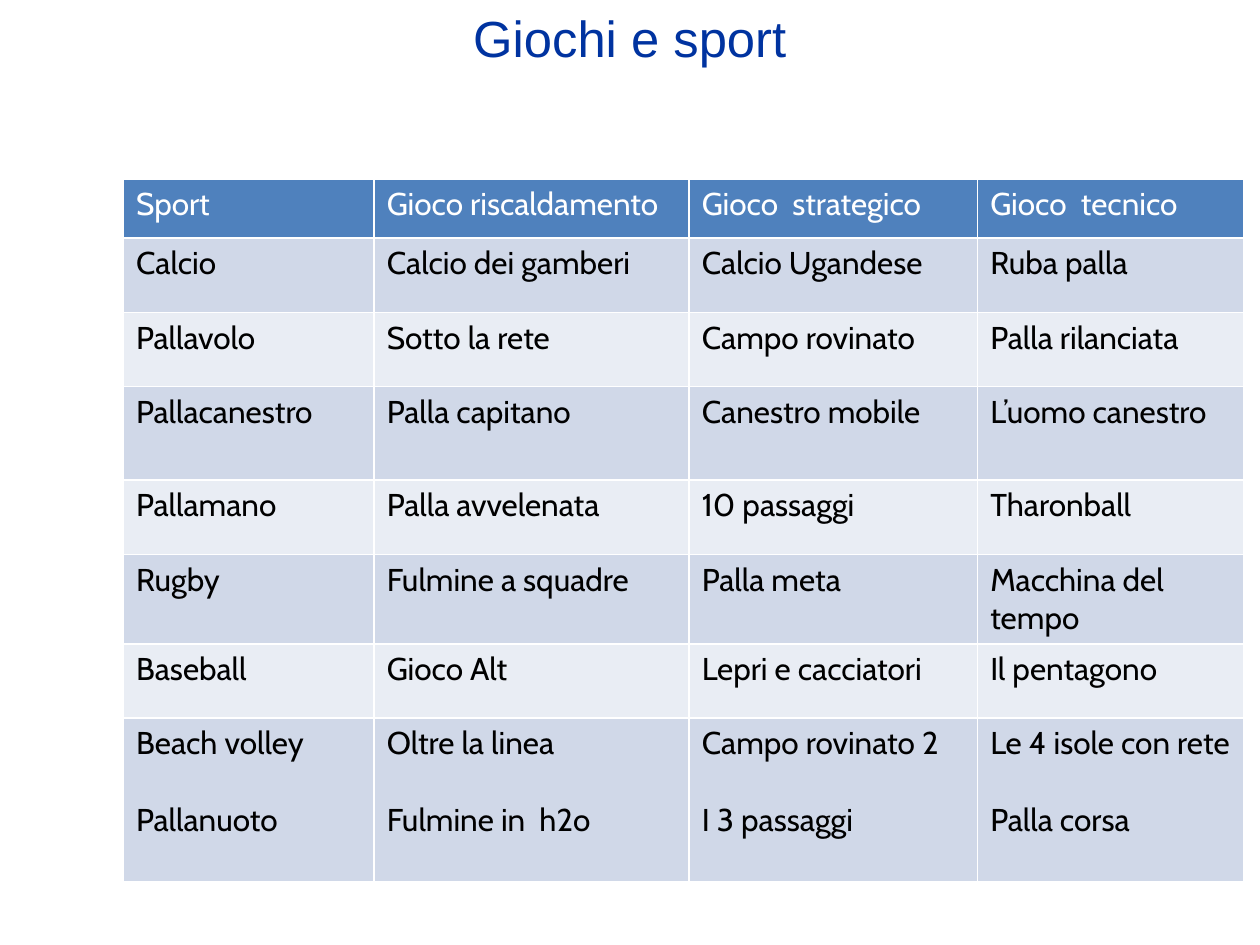
"""Build a slide with a table of games for each sport."""
import pptx
import pptx.util
import pptx.dml.color
import pptx.enum.text

Inches = pptx.util.Inches
Pt = pptx.util.Pt
RGBColor = pptx.dml.color.RGBColor
PP_ALIGN = pptx.enum.text.PP_ALIGN

BLUE = RGBColor(0x00, 0x33, 0xA0)
HEADER = RGBColor(0x4F, 0x81, 0xBD)
BAND_DARK = RGBColor(0xD0, 0xD8, 0xE8)
BAND_LIGHT = RGBColor(0xE9, 0xED, 0xF4)
WHITE = RGBColor(0xFF, 0xFF, 0xFF)
BLACK = RGBColor(0x00, 0x00, 0x00)

COL_WIDTHS = [1.99, 2.5, 2.29, 2.11]
ROW_HEIGHTS = [0.47, 0.59, 0.59, 0.74, 0.59, 0.7, 0.59, 1.3]
ROWS = [
    ["Sport", "Gioco riscaldamento", "Gioco  strategico", "Gioco  tecnico"],
    ["Calcio", "Calcio dei gamberi", "Calcio Ugandese", "Ruba palla"],
    ["Pallavolo", "Sotto la rete", "Campo rovinato", "Palla rilanciata"],
    ["Pallacanestro", "Palla capitano", "Canestro mobile", "L’uomo canestro"],
    ["Pallamano", "Palla avvelenata", "10 passaggi", "Tharonball"],
    ["Rugby", "Fulmine a squadre", "Palla meta", "Macchina del tempo"],
    ["Baseball", "Gioco Alt", "Lepri e cacciatori", "Il pentagono"],
    ["Beach volley\nPallanuoto", "Oltre la linea\nFulmine in  h2o",
     "Campo rovinato 2\nI 3 passaggi", "Le 4 isole con rete\nPalla corsa"],
]


def add_run(p, text, font, size, color):
    r = p.add_run()
    r.text = text
    r.font.name = font
    r.font.size = Pt(size)
    r.font.bold = False
    r.font.color.rgb = color


prs = pptx.Presentation()
prs.slide_width = Inches(10)
prs.slide_height = Inches(7.5)
s = prs.slides.add_slide(prs.slide_layouts[5])

title = s.shapes.title
title.left, title.top = Inches(0.5), Inches(0.05)
title.width, title.height = Inches(9), Inches(1.25)
tf = title.text_frame
tf.margin_left = tf.margin_top = tf.margin_right = tf.margin_bottom = 0
tf.vertical_anchor = pptx.enum.text.MSO_ANCHOR.TOP
tf.paragraphs[0].alignment = PP_ALIGN.CENTER
add_run(tf.paragraphs[0], "Giochi e sport", "Arial", 29, BLUE)

table = s.shapes.add_table(
    len(ROWS), len(COL_WIDTHS), Inches(0.98), Inches(1.42),
    Inches(sum(COL_WIDTHS)), Inches(sum(ROW_HEIGHTS))).table
for col, width in zip(table.columns, COL_WIDTHS):
    col.width = Inches(width)
for row, height in zip(table.rows, ROW_HEIGHTS):
    row.height = Inches(height)

for i, texts in enumerate(ROWS):
    fill = HEADER if i == 0 else BAND_DARK if i % 2 else BAND_LIGHT
    color = WHITE if i == 0 else BLACK
    for j, text in enumerate(texts):
        cell = table.cell(i, j)
        cell.fill.solid()
        cell.fill.fore_color.rgb = fill
        tf = cell.text_frame
        for k, line in enumerate(text.split("\n")):
            p = tf.add_paragraph() if k else tf.paragraphs[0]
            p.alignment = PP_ALIGN.LEFT
            if k:
                p.space_before = Pt(22)
            add_run(p, line, "Cabin", 18, color)

prs.save("out.pptx")
